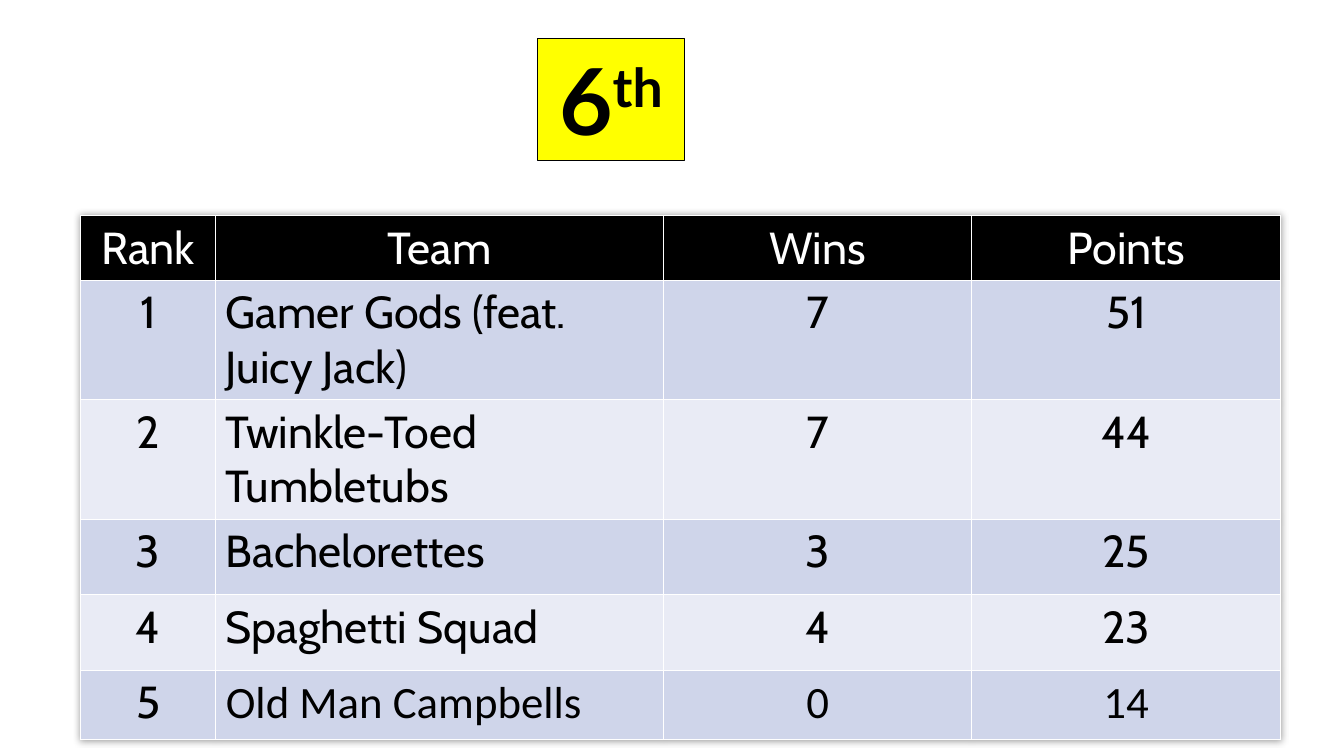
import pptx
import pptx.util
import pptx.dml.color
import pptx.enum.shapes
import pptx.enum.text
from lxml import etree

Inches, Pt = pptx.util.Inches, pptx.util.Pt
RGBColor = pptx.dml.color.RGBColor
CENTER = pptx.enum.text.PP_ALIGN.CENTER
MIDDLE = pptx.enum.text.MSO_ANCHOR.MIDDLE

BLACK = RGBColor(0x00, 0x00, 0x00)
WHITE = RGBColor(0xFF, 0xFF, 0xFF)
YELLOW = RGBColor(0xFF, 0xFF, 0x00)
BAND_DARK = RGBColor(0xCF, 0xD5, 0xEA)
BAND_LIGHT = RGBColor(0xE9, 0xEB, 0xF5)

STANDINGS = [
    ("Rank", "Team", "Wins", "Points"),
    ("1", "Gamer Gods (feat. Juicy Jack)", "7", "51"),
    ("2", "Twinkle-Toed Tumbletubs", "7", "44"),
    ("3", "Bachelorettes", "3", "25"),
    ("4", "Spaghetti Squad", "4", "23"),
    ("5", "Old Man Campbells", "0", "14"),
]
COL_WIDTHS = [1.34, 4.44, 3.06, 3.06]
ROW_HEIGHTS = [0.63, 0.75, 0.75, 0.75, 0.75, 0.69]


def add_run(p, text, font, size, color, bold=False):
    r = p.add_run()
    r.text = text
    r.font.name = font
    r.font.size = Pt(size)
    r.font.bold = bold
    r.font.color.rgb = color
    return r


prs = pptx.Presentation()
prs.slide_width, prs.slide_height = Inches(13.33), Inches(7.5)
s = prs.slides.add_slide(prs.slide_layouts[6])

# Standings table
table = s.shapes.add_table(len(STANDINGS), len(COL_WIDTHS), Inches(0.8), Inches(2.14),
                           Inches(11.91), Inches(4.33)).table
for column, width in zip(table.columns, COL_WIDTHS):
    column.width = Inches(width)
for row, height in zip(table.rows, ROW_HEIGHTS):
    row.height = Inches(height)

for i, entry in enumerate(STANDINGS):
    header = i == 0
    for j, text in enumerate(entry):
        cell = table.cell(i, j)
        cell.fill.solid()
        if header:
            cell.fill.fore_color.rgb = BLACK
            cell.vertical_anchor = MIDDLE
        else:
            cell.fill.fore_color.rgb = BAND_DARK if i % 2 else BAND_LIGHT
        p = cell.text_frame.paragraphs[0]
        if header or j != 1:
            p.alignment = CENTER
        # The last team's details are set in Calibri
        font = "Calibri" if i == len(STANDINGS) - 1 and j > 0 else "Cabin"
        add_run(p, text, font, 32, WHITE if header else BLACK)

# Soft shadow around the table
table._tbl.tblPr.insert(0, etree.fromstring(
    '<a:effectLst xmlns:a="http://schemas.openxmlformats.org/drawingml/2006/main">'
    '<a:outerShdw blurRad="63500" algn="ctr" rotWithShape="0">'
    '<a:prstClr val="black"><a:alpha val="40000"/></a:prstClr>'
    '</a:outerShdw></a:effectLst>'))

# Place badge
badge = s.shapes.add_shape(pptx.enum.shapes.MSO_SHAPE.RECTANGLE,
                           Inches(5.33), Inches(0.38), Inches(1.46), Inches(1.21))
badge.shadow.inherit = False
badge.fill.solid()
badge.fill.fore_color.rgb = YELLOW
badge.line.color.rgb = BLACK
badge.line.width = Pt(0.75)
tf = badge.text_frame
tf.word_wrap = False
tf.auto_size = pptx.enum.text.MSO_AUTO_SIZE.SHAPE_TO_FIT_TEXT
tf.vertical_anchor = pptx.enum.text.MSO_ANCHOR.TOP
p = tf.paragraphs[0]
p.alignment = CENTER
add_run(p, "6", "Lato", 66, BLACK, bold=True)
r = add_run(p, "th", "Lato", 66, BLACK, bold=True)
r.font._element.set("baseline", "30000")

prs.save("out.pptx")
